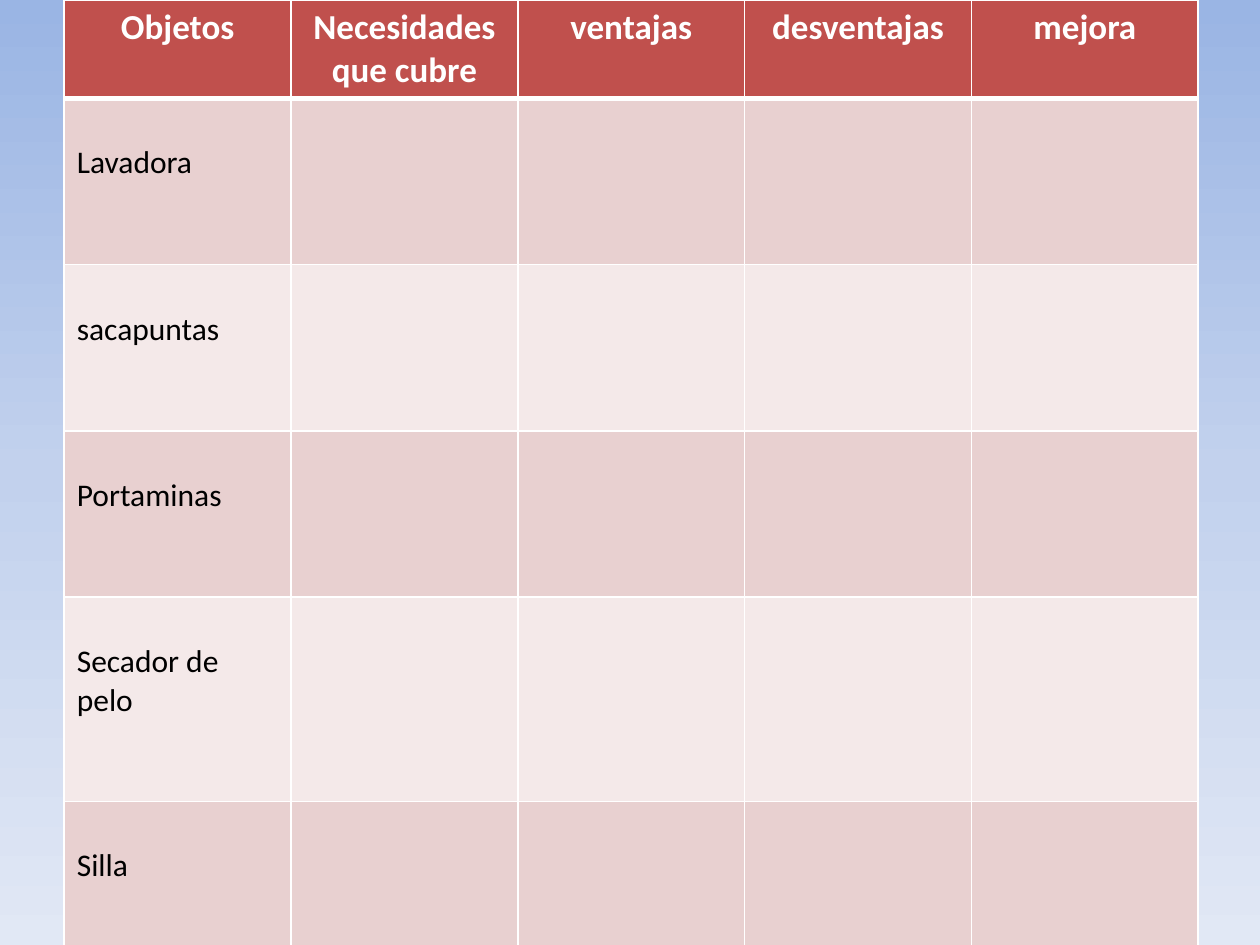
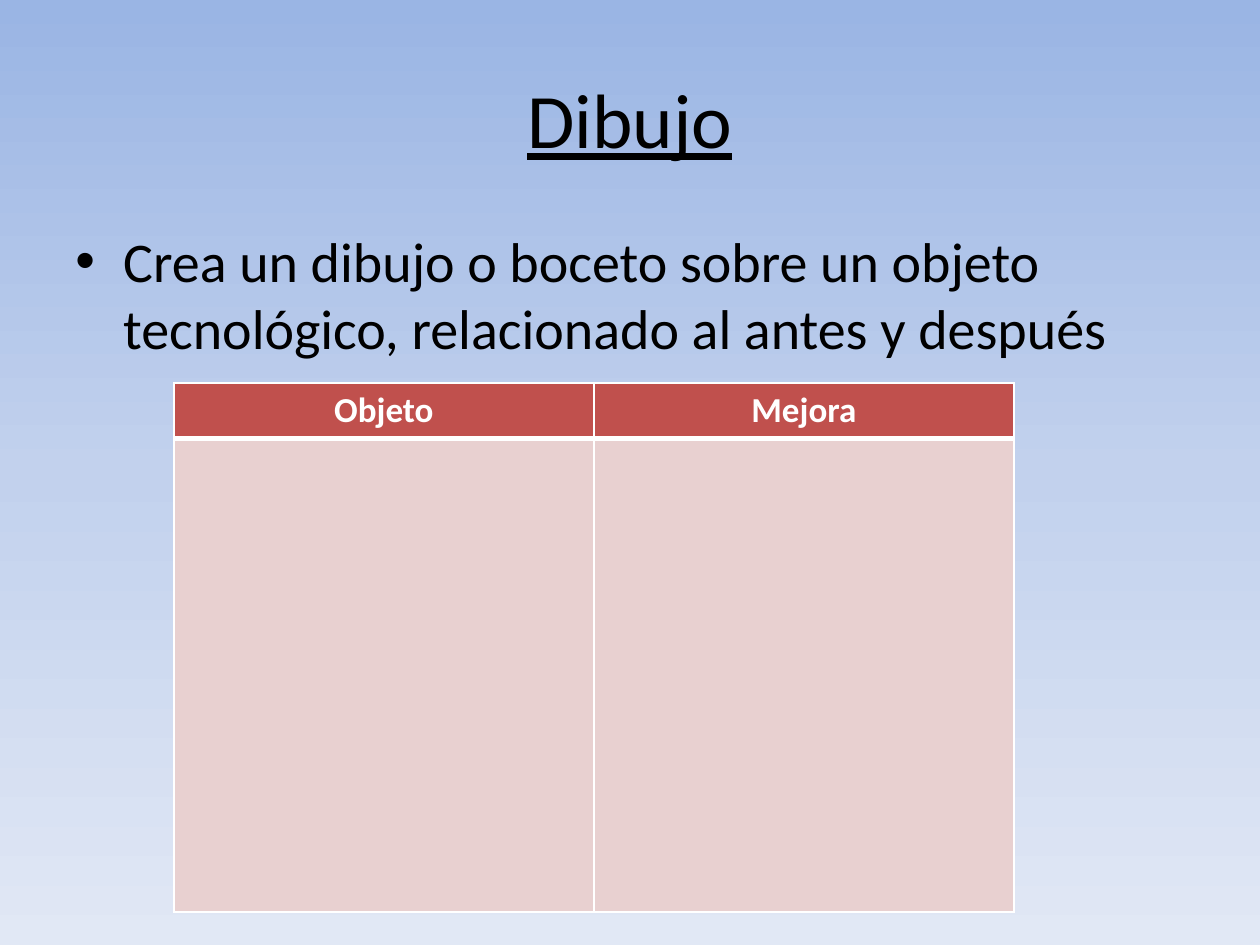
from copy import deepcopy
from dataclasses import dataclass

from lxml.etree import SubElement
from pptx import Presentation
from pptx.dml.color import RGBColor
from pptx.enum.text import MSO_ANCHOR, PP_ALIGN
from pptx.oxml.ns import qn
from pptx.util import Inches, Pt

SLIDE_WIDTH, SLIDE_HEIGHT = 10, 7.5


@dataclass(frozen=True)
class Theme:
    font: str = "Calibri"
    background: tuple = ("9AB5E4", "C2D1ED", "E1E8F5")
    text: str = "000000"
    header_text: str = "FFFFFF"
    header_fill: str = "C0504D"
    bands: tuple = ("E8D0D0", "F4E9E9")
    border: str = "FFFFFF"
    thin: float = 1
    thick: float = 3
    title_size: int = 44
    body_size: int = 32
    header_size: int = 20
    cell_size: int = 18


@dataclass(frozen=True)
class Box:
    left: float
    top: float
    width: float
    height: float

    def emu(self):
        return [Inches(side) for side in (self.left, self.top, self.width, self.height)]


THEME = Theme()


def slide_box(left, top, width, height):
    return Box(left * SLIDE_WIDTH, top * SLIDE_HEIGHT, width * SLIDE_WIDTH, height * SLIDE_HEIGHT)


def add_slide(presentation):
    slide = presentation.slides.add_slide(presentation.slide_layouts[6])
    fill = slide.background.fill
    fill.gradient()
    fill.gradient_angle = 270
    stop_list = slide.element.find(".//" + qn("a:gsLst"))
    stop_list.append(deepcopy(stop_list[-1]))
    last = len(THEME.background) - 1
    for index, stop in enumerate(fill.gradient_stops):
        stop.position = index / last
        stop.color.rgb = RGBColor.from_string(THEME.background[index])
    return slide


def add_run(paragraph, text, size, color=THEME.text, bold=False, underline=False):
    run = paragraph.add_run()
    run.text = text
    run.font.name = THEME.font
    run.font.size = Pt(size)
    run.font.bold = bold
    run.font.underline = underline
    run.font.color.rgb = RGBColor.from_string(color)


def add_text_frame(slide, box, anchor):
    frame = slide.shapes.add_textbox(*box.emu()).text_frame
    frame.word_wrap = True
    frame.vertical_anchor = anchor
    return frame


def add_title(slide, box, text):
    paragraph = add_text_frame(slide, box, MSO_ANCHOR.MIDDLE).paragraphs[0]
    paragraph.alignment = PP_ALIGN.CENTER
    add_run(paragraph, text, THEME.title_size, underline=True)


def add_bullet(slide, box, text):
    paragraph = add_text_frame(slide, box, MSO_ANCHOR.TOP).paragraphs[0]
    properties = paragraph._p.get_or_add_pPr()
    indent = Inches(0.38)
    properties.set("marL", str(indent))
    properties.set("indent", str(-indent))
    SubElement(properties, qn("a:buFont"), typeface="Arial")
    SubElement(properties, qn("a:buChar"), char="•")
    add_run(paragraph, text, THEME.body_size)


def style_cell(cell, fill, top, bottom):
    properties = cell._tc.get_or_add_tcPr()
    for side, width in (("L", THEME.thin), ("R", THEME.thin), ("T", top), ("B", bottom)):
        line = SubElement(properties, qn(f"a:ln{side}"), w=str(Pt(width)))
        SubElement(SubElement(line, qn("a:solidFill")), qn("a:srgbClr"), val=THEME.border)
    cell.fill.solid()
    cell.fill.fore_color.rgb = RGBColor.from_string(fill)


def add_banded_table(slide, box, headers, labels, row_heights):
    shape = slide.shapes.add_table(len(row_heights), len(headers), *box.emu())
    table = shape.table
    for column in table.columns:
        column.width = Inches(box.width / len(headers))
    for row_index, height in enumerate(row_heights):
        row = table.rows[row_index]
        row.height = Inches(height)
        is_header = row_index == 0
        fill = THEME.header_fill if is_header else THEME.bands[(row_index - 1) % 2]
        top = THEME.thick if row_index == 1 else THEME.thin
        bottom = THEME.thick if is_header else THEME.thin
        for cell in row.cells:
            style_cell(cell, fill, top, bottom)
    for cell, header in zip(table.rows[0].cells, headers):
        paragraph = cell.text_frame.paragraphs[0]
        paragraph.alignment = PP_ALIGN.CENTER
        add_run(paragraph, header, THEME.header_size, THEME.header_text, bold=True)
    for row_index, label in enumerate(labels, start=1):
        cell = table.cell(row_index, 0)
        cell.margin_top = Inches(0.36)
        add_run(cell.text_frame.paragraphs[0], label, THEME.cell_size)


def build_objects_slide(presentation):
    slide = add_slide(presentation)
    headers = ["Objetos", "Necesidades que cubre", "ventajas", "desventajas", "mejora"]
    labels = ["Lavadora", "sacapuntas", "Portaminas", "Secador de pelo", "Silla"]
    row_heights = [0.78, 1.32, 1.32, 1.32, 1.62, 1.21]
    box = Box(0.51, 0, 0.9 * SLIDE_WIDTH, sum(row_heights))
    add_banded_table(slide, box, headers, labels, row_heights)


def build_drawing_slide(presentation):
    slide = add_slide(presentation)
    add_title(slide, slide_box(0.05, 0.04, 0.9, 0.17), "Dibujo")
    add_bullet(
        slide,
        Box(0.5, 1.75, 9, 4.95),
        "Crea un dibujo o boceto sobre un objeto tecnológico, relacionado al antes y después",
    )
    row_heights = [0.44, 3.76]
    box = Box(1.38, 3.04, SLIDE_WIDTH * 2 / 3, sum(row_heights))
    add_banded_table(slide, box, ["Objeto", "Mejora"], [], row_heights)


def main():
    presentation = Presentation()
    presentation.slide_width = Inches(SLIDE_WIDTH)
    presentation.slide_height = Inches(SLIDE_HEIGHT)
    build_objects_slide(presentation)
    build_drawing_slide(presentation)
    presentation.save("out.pptx")


if __name__ == "__main__":
    main()
